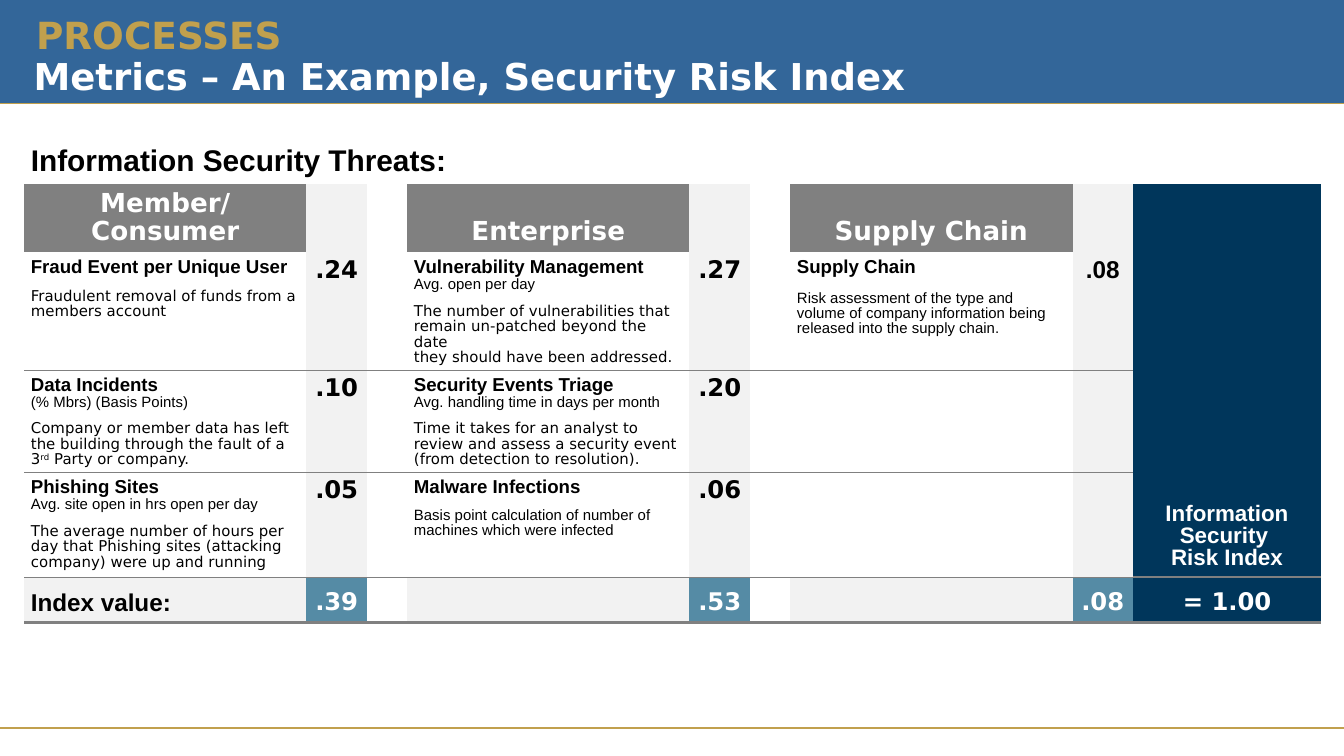
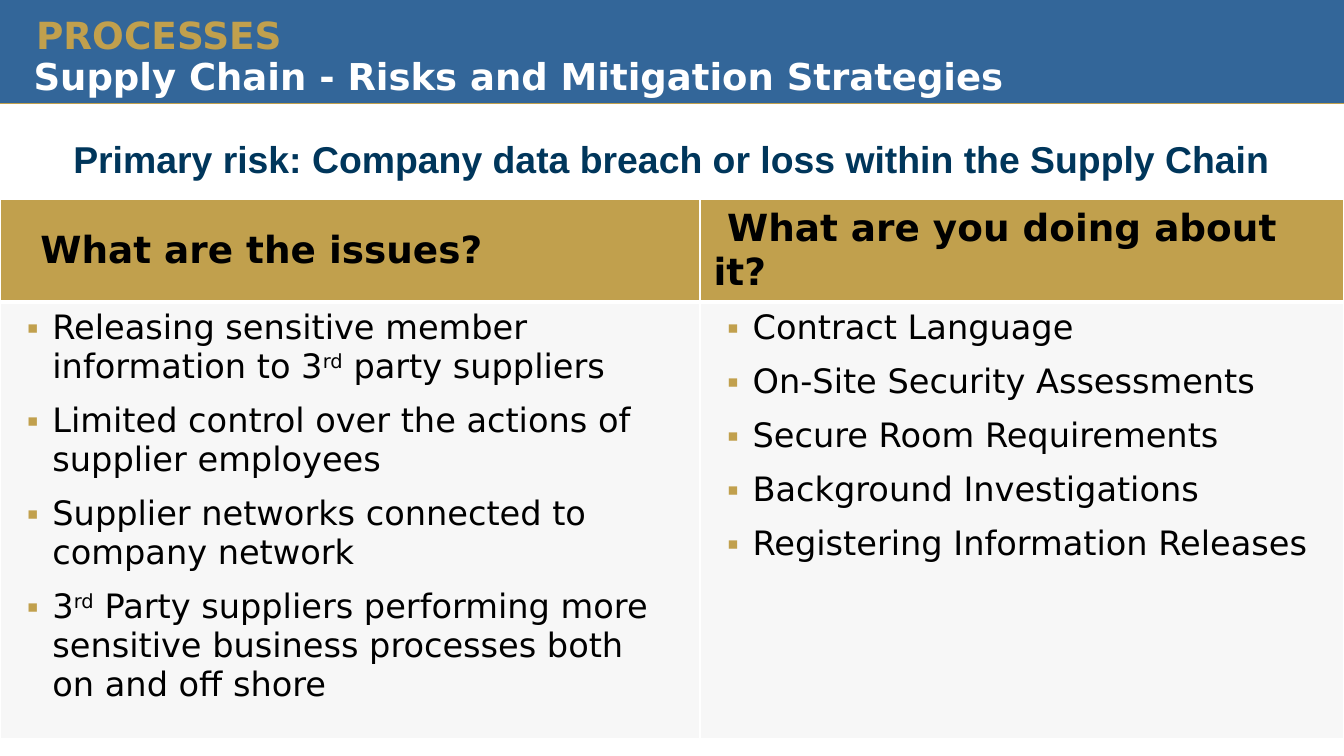
"""Build two slides on security metrics and supply chain risk."""
from lxml.etree import SubElement
from pptx import Presentation
from pptx.dml.color import RGBColor
from pptx.enum.shapes import MSO_CONNECTOR, MSO_SHAPE
from pptx.enum.text import MSO_ANCHOR, MSO_AUTO_SIZE, PP_ALIGN
from pptx.oxml.ns import qn
from pptx.util import Inches, Pt

BLUE, GOLD, NAVY, TEAL = "336699", "C1A04D", "00365B", "558BA5"
GRAY, LIGHT, PALE, WHITE, BLACK = "808080", "F2F2F2", "F7F7F7", "FFFFFF", "000000"
ARIAL, DEJAVU = "Arial", "DejaVu Sans"
TIGHT = 0.89


def write(paragraph, text, size, name, color=BLACK, bold=False, align=PP_ALIGN.LEFT, spacing=TIGHT):
    """Add text to a paragraph; a newline breaks the line, carets enclose superscript."""
    paragraph.alignment = align
    paragraph.line_spacing = spacing
    for line_number, line in enumerate(text.split("\n")):
        if line_number:
            paragraph.add_line_break()
            line_break = paragraph._p.findall(qn("a:br"))[-1]
            SubElement(line_break, qn("a:rPr"), sz=str(int(size * 100)))
        for piece_number, piece in enumerate(line.split("^")):
            if not piece:
                continue
            run = paragraph.add_run()
            run.text = piece
            run.font.size = Pt(size)
            run.font.name = name
            run.font.bold = bold
            run.font.color.rgb = RGBColor.from_string(color)
            if piece_number % 2:
                run._r.get_or_add_rPr().set("baseline", "30000")


def style_cell(cell, fill, borders, anchor=MSO_ANCHOR.TOP, left=0.05, right=0.05, bottom=0.05):
    """Set fill, margins, anchor and borders, given as side: (colour, points)."""
    properties = cell._tc.get_or_add_tcPr()
    for side in "LRTB":
        color, width = borders.get(side, (None, 0))
        line = SubElement(properties, qn(f"a:ln{side}"), w=str(Pt(width)))
        if color:
            SubElement(SubElement(line, qn("a:solidFill")), qn("a:srgbClr"), val=color)
        else:
            SubElement(line, qn("a:noFill"))
    cell.fill.solid()
    cell.fill.fore_color.rgb = RGBColor.from_string(fill)
    cell.vertical_anchor = anchor
    cell.margin_left, cell.margin_right = Inches(left), Inches(right)
    cell.margin_top, cell.margin_bottom = Inches(0.05), Inches(bottom)
    SubElement(cell.text_frame.paragraphs[0]._p, qn("a:endParaRPr"), sz="800")


presentation = Presentation()
presentation.slide_width = Inches(10)
presentation.slide_height = presentation.slide_width * 9 // 16
layout = presentation.slide_layouts[5]
titles = ["Metrics – An Example, Security Risk Index",
          "Supply Chain - Risks and Mitigation Strategies"]
metrics_slide, supply_slide = [presentation.slides.add_slide(layout) for title in titles]

band = metrics_slide.shapes.add_shape(MSO_SHAPE.RECTANGLE, 0, 0, Inches(10), Inches(0.77))
band.shadow.inherit = False
band.fill.solid()
band.fill.fore_color.rgb = RGBColor.from_string(BLUE)
band.line.fill.background()
layout.shapes._spTree.append(band._element)
for top in (5.42, 0.77):
    rule = metrics_slide.shapes.add_connector(
        MSO_CONNECTOR.STRAIGHT, 0, Inches(top), Inches(10), Inches(top))
    rule.line.color.rgb = RGBColor.from_string(GOLD)
    rule.line.width = Pt(1)
    SubElement(rule._element.spPr, qn("a:effectLst"))
    layout.shapes._spTree.append(rule._element)

for slide, text in zip((metrics_slide, supply_slide), titles):
    title = slide.shapes.title
    title.left, title.top, title.width, title.height = map(Inches, (0.25, 0.1, 9, 0.68))
    frame = title.text_frame
    frame.auto_size = MSO_AUTO_SIZE.NONE
    frame.word_wrap = True
    frame.vertical_anchor = MSO_ANCHOR.BOTTOM
    frame.margin_left, frame.margin_right = 0, Inches(0.1)
    frame.margin_top = frame.margin_bottom = Inches(0.05)
    write(frame.paragraphs[0], text, 19.8, DEJAVU, WHITE, True)

index_table = metrics_slide.shapes.add_table(
    6, 9, Inches(0.18), Inches(0.98), Inches(9.65), Inches(3.35)).table
index_table.first_row = index_table.horz_banding = False
for column, width in zip(index_table.columns, [2.1, 0.45, 0.3] * 2 + [2.1, 0.45, 1.4]):
    column.width = Inches(width)
for row, height in zip(index_table.rows, (0.39, 0.34, 0.75, 0.75, 0.78, 0.34)):
    row.height = Inches(height)

row_fills = [(WHITE, WHITE, WHITE), (GRAY, LIGHT, WHITE)]
row_fills += [(WHITE, LIGHT, WHITE)] * 3 + [(LIGHT, TEAL, WHITE)]
thick, thin = (GRAY, 1.5), (GRAY, 0.5)
for row in range(6):
    for column in range(9):
        is_index = column == 8 and row > 0
        is_metric = row in (2, 3, 4) and not is_index
        borders = {}
        if row == 5:
            borders = {"T": thick if is_index else thin, "B": thick}
        elif is_index and row in (1, 4):
            borders = {"B": thick}
        elif is_metric:
            borders = {"B": thin} if row == 2 else {"T": thin, "B": thin}
        style_cell(index_table.cell(row, column), NAVY if is_index else row_fills[row][column % 3],
                   borders, MSO_ANCHOR.TOP if is_metric else MSO_ANCHOR.BOTTOM,
                   bottom=0.03 if is_metric else 0.05)
index_table.cell(0, 0).merge(index_table.cell(0, 6))
index_table.cell(1, 8).merge(index_table.cell(4, 8))

for row, column, text, size, name, color, align in [
    (0, 0, "Information Security Threats:", 16, ARIAL, BLACK, PP_ALIGN.LEFT),
    (1, 0, "Member/Consumer", 14, DEJAVU, WHITE, PP_ALIGN.CENTER),
    (1, 3, "Enterprise", 14, DEJAVU, WHITE, PP_ALIGN.CENTER),
    (1, 6, "Supply Chain", 14, DEJAVU, WHITE, PP_ALIGN.CENTER),
    (1, 8, "Information Security \nRisk Index", 12, ARIAL, WHITE, PP_ALIGN.CENTER),
    (5, 0, "Index value:", 13, ARIAL, BLACK, PP_ALIGN.LEFT),
    (5, 1, ".39", 13, DEJAVU, WHITE, PP_ALIGN.CENTER),
    (5, 4, ".53", 13, DEJAVU, WHITE, PP_ALIGN.CENTER),
    (5, 7, ".08", 13, DEJAVU, WHITE, PP_ALIGN.CENTER),
    (5, 8, "= 1.00", 13, DEJAVU, WHITE, PP_ALIGN.CENTER),
]:
    write(index_table.cell(row, column).text_frame.paragraphs[0], text, size, name, color, True, align)

for row, column, name, unit, description, description_font, gap, value, value_font in [
    (2, 0, "Fraud Event per Unique User", "",
     "Fraudulent removal of funds from a members account", DEJAVU, 6, ".24", DEJAVU),
    (2, 3, "Vulnerability Management", "Avg. open per day",
     "The number of vulnerabilities that remain un-patched beyond the date \n"
     "they should have been addressed.", DEJAVU, 6, ".27", DEJAVU),
    (2, 6, "Supply Chain", "",
     "Risk assessment of the type and volume of company information being "
     "released into the supply chain.", ARIAL, 7.5, ".08", ARIAL),
    (3, 0, "Data Incidents", "(% Mbrs) (Basis Points)",
     "Company or member data has left the building through the fault of a "
     "3^rd^ Party or company.", DEJAVU, 6, ".10", DEJAVU),
    (3, 3, "Security Events Triage", "Avg. handling time in days per month",
     "Time it takes for an analyst to review and assess a security event "
     "(from detection to resolution).", DEJAVU, 6, ".20", DEJAVU),
    (4, 0, "Phishing Sites", "Avg. site open in hrs open per day",
     "The average number of hours per day that Phishing sites (attacking company) "
     "were up and running", DEJAVU, 6, ".05", DEJAVU),
    (4, 3, "Malware Infections", "",
     "Basis point calculation of number of machines which were infected",
     ARIAL, 6, ".06", DEJAVU),
]:
    frame = index_table.cell(row, column).text_frame
    write(frame.paragraphs[0], name, 10, ARIAL, bold=True)
    if unit:
        write(frame.paragraphs[0], "\n" + unit, 8, ARIAL)
    paragraph = frame.add_paragraph()
    paragraph.space_before = Pt(gap)
    write(paragraph, description, 8, description_font)
    write(index_table.cell(row, column + 1).text_frame.paragraphs[0], value, 13, value_font,
          bold=True, align=PP_ALIGN.CENTER)

risk = supply_slide.shapes.add_textbox(0, Inches(1.05), Inches(10), Inches(0.39))
frame = risk.text_frame
frame.word_wrap = True
frame.margin_left = frame.margin_right = frame.margin_top = frame.margin_bottom = 0
write(frame.paragraphs[0], "Primary risk: Company data breach or loss within the Supply Chain",
      20, ARIAL, NAVY, True, PP_ALIGN.CENTER)

strategy_table = supply_slide.shapes.add_table(
    2, 2, 0, Inches(1.48), Inches(10), Inches(3.72)).table
strategy_table.horz_banding = False
for row, height in zip(strategy_table.rows, (0.47, 3.25)):
    row.height = Inches(height)
for column, (width, heading, header_left, body_right, points) in enumerate([
    (5.21, "What are the issues?", 0.2, 0.3, [
        "Releasing sensitive member information to 3^rd^ party suppliers",
        "Limited control over the actions of supplier employees",
        "Supplier networks connected to company network",
        "3^rd^ Party suppliers performing more sensitive business processes both on and off shore",
    ]),
    (4.79, "What are you doing about it?", 0.1, 0.1, [
        "Contract Language",
        "On-Site Security Assessments",
        "Secure Room Requirements",
        "Background Investigations",
        "Registering Information Releases",
    ]),
]):
    strategy_table.columns[column].width = Inches(width)
    borders = dict.fromkeys("LRTB", (WHITE, 1))
    header = strategy_table.cell(0, column)
    style_cell(header, GOLD, {**borders, "B": (WHITE, 3)}, MSO_ANCHOR.MIDDLE, header_left, 0.1)
    paragraph = header.text_frame.paragraphs[0]
    paragraph._p.get_or_add_pPr().set("indent", str(Inches(0.1)))
    write(paragraph, heading, 20, DEJAVU, bold=True, spacing=1)

    body = strategy_table.cell(1, column)
    style_cell(body, PALE, {**borders, "T": (WHITE, 3)}, left=0.2, right=body_right)
    for number, point in enumerate(points):
        paragraph = body.text_frame.add_paragraph() if number else body.text_frame.paragraphs[0]
        properties = paragraph._p.get_or_add_pPr()
        properties.set("marL", str(Inches(0.19)))
        properties.set("indent", str(-Inches(0.19)))
        SubElement(SubElement(properties, qn("a:buClr")), qn("a:srgbClr"), val=GOLD)
        SubElement(properties, qn("a:buFont"), typeface=ARIAL)
        SubElement(properties, qn("a:buChar"), char="▪")
        paragraph.space_before = Pt(4 if number else 0)
        paragraph.space_after = Pt(4)
        write(paragraph, point, 18, DEJAVU, spacing=1)

for slide in (metrics_slide, supply_slide):
    section = slide.shapes.add_textbox(Inches(0.17), Inches(0.04), Inches(2.05), Inches(0.44))
    section.text_frame.word_wrap = False
    section.text_frame.auto_size = MSO_AUTO_SIZE.SHAPE_TO_FIT_TEXT
    write(section.text_frame.paragraphs[0], "PROCESSES", 20, DEJAVU, GOLD, True, spacing=1)

presentation.save("out.pptx")
